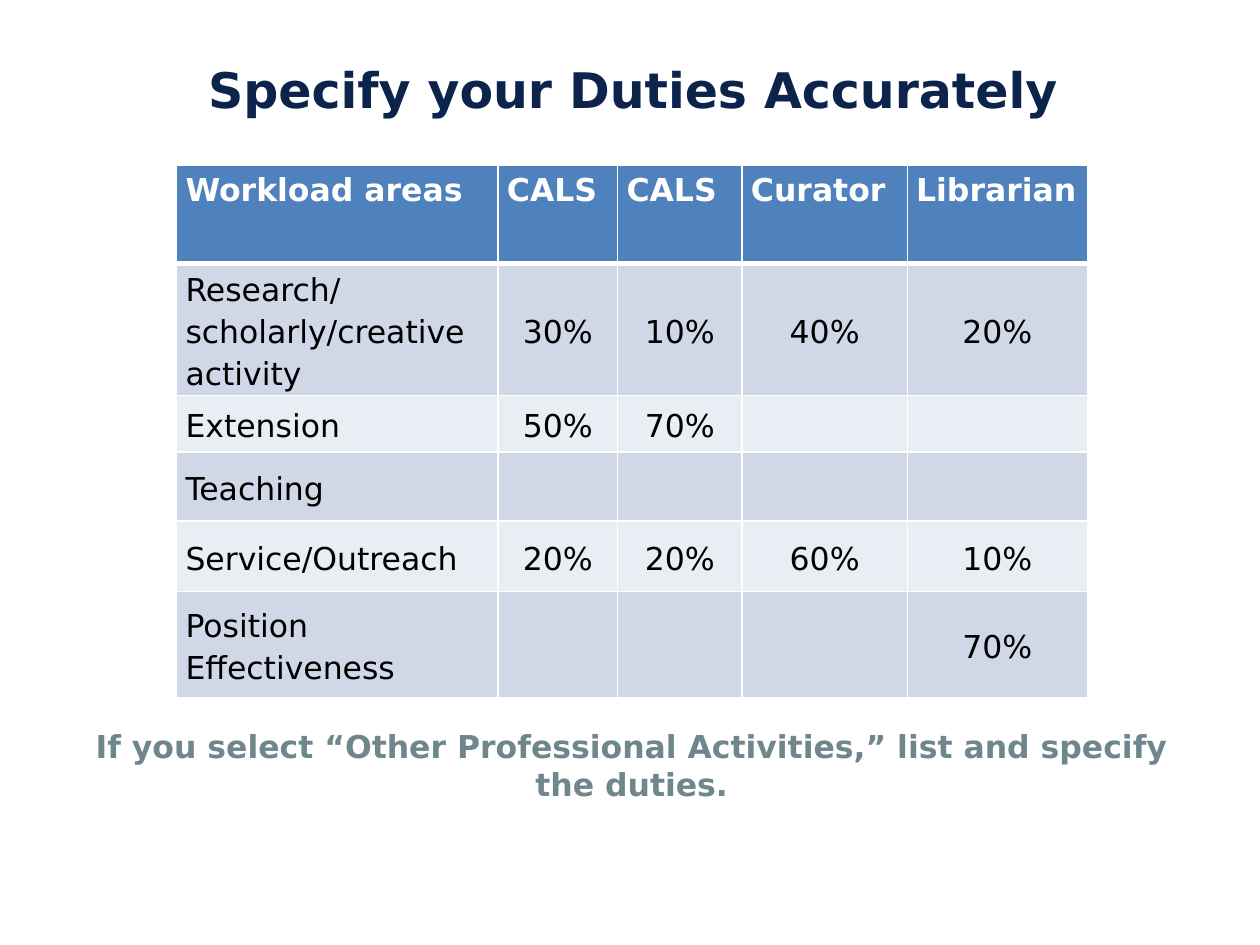
import pptx
import pptx.util
import pptx.dml.color
import pptx.enum.text
import pptx.oxml
import pptx.oxml.ns

Cm, Pt = pptx.util.Cm, pptx.util.Pt
ALIGN, ANCHOR = pptx.enum.text.PP_ALIGN, pptx.enum.text.MSO_ANCHOR
FONT = "DejaVu Sans"
COLORS = {
    "navy": "0C234B",
    "slate": "6F868D",
    "header": "4F81BD",
    "dark_band": "D0D8E8",
    "light_band": "E9EDF4",
    "white": "FFFFFF",
    "black": "000000",
}
COL_WIDTHS = [6.48, 2.41, 2.51, 3.33, 3.63]
ROW_HEIGHTS = [1.98, 2.49, 1.14, 1.4, 1.42, 2.13]
DUTIES = [
    ["Workload areas", "CALS", "CALS", "Curator", "Librarian"],
    ["Research/scholarly/creative activity", "30%", "10%", "40%", "20%"],
    ["Extension", "50%", "70%", "", ""],
    ["Teaching", "", "", "", ""],
    ["Service/Outreach", "20%", "20%", "60%", "10%"],
    ["Position Effectiveness", "", "", "", "70%"],
]


def rgb(name):
    """Return the named colour."""
    return pptx.dml.color.RGBColor.from_string(COLORS[name])


def write(tf, text, size, color, bold, align):
    """Write one formatted paragraph and return it."""
    tf.text = text
    p = tf.paragraphs[0]
    p.alignment = align
    for r in p.runs:
        r.font.name, r.font.size, r.font.bold = FONT, Pt(size), bold
        r.font.color.rgb = rgb(color)
    return p


def add_title(s, text):
    """Place and fill the title placeholder."""
    sp = s.shapes.title
    sp.left, sp.top, sp.width, sp.height = Cm(1.96), Cm(0.25), Cm(21.59), Cm(3.07)
    sp.text_frame.vertical_anchor = ANCHOR.MIDDLE
    write(sp.text_frame, text, 28, "navy", True, ALIGN.CENTER)


def add_note(s, text):
    """Add the centred remark under the table."""
    tf = s.shapes.add_textbox(Cm(1.24), Cm(14.53), Cm(22.99), Cm(1.8)).text_frame
    tf.word_wrap = True
    tf.auto_size = pptx.enum.text.MSO_AUTO_SIZE.SHAPE_TO_FIT_TEXT
    write(tf, text, 18, "slate", True, ALIGN.CENTER)


def set_borders(cell, widths):
    """Draw white borders of the given point widths, keyed by side."""
    tcPr = cell._tc.get_or_add_tcPr()
    for i, side in enumerate("LRTB"):
        tcPr.insert(i, pptx.oxml.parse_xml(
            f'<a:ln{side} {pptx.oxml.ns.nsdecls("a")} w="{Pt(widths[side])}">'
            f'<a:solidFill><a:srgbClr val="{COLORS["white"]}"/></a:solidFill></a:ln{side}>'))


def fill_cell(cell, text, row, col):
    """Format one table cell according to its row and column."""
    header = row == 0
    band = "header" if header else "dark_band" if row % 2 else "light_band"
    cell.fill.solid()
    cell.fill.fore_color.rgb = rgb(band)
    set_borders(cell, {"L": 1, "R": 1, "T": 3 if row == 1 else 1, "B": 3 if header else 1})
    if not text:
        return
    cell.margin_left = cell.margin_right = Cm(0.18)
    cell.margin_top, cell.margin_bottom = Cm(0.03), 0
    cell.vertical_anchor = ANCHOR.TOP if header else ANCHOR.MIDDLE
    align = ALIGN.LEFT if header or col == 0 else ALIGN.CENTER
    p = write(cell.text_frame, text, 18, "white" if header else "black", header, align)
    p.line_spacing, p.space_after = 1.15, Pt(10)


def add_duties_table(s):
    """Add the table of workload shares."""
    table = s.shapes.add_table(
        len(ROW_HEIGHTS), len(COL_WIDTHS), Cm(3.56), Cm(3.33),
        Cm(sum(COL_WIDTHS)), Cm(sum(ROW_HEIGHTS))).table
    for column, width in zip(table.columns, COL_WIDTHS):
        column.width = Cm(width)
    for row, height in zip(table.rows, ROW_HEIGHTS):
        row.height = Cm(height)
    for i, texts in enumerate(DUTIES):
        for j, text in enumerate(texts):
            fill_cell(table.cell(i, j), text, i, j)


def main():
    """Build and save the slide."""
    prs = pptx.Presentation()
    prs.slide_width, prs.slide_height = Cm(25.4), Cm(19.05)
    s = prs.slides.add_slide(prs.slide_layouts[5])
    add_title(s, "Specify your Duties Accurately")
    add_note(s, "If you select “Other Professional Activities,” list and specify the duties.")
    add_duties_table(s)
    prs.save("out.pptx")


if __name__ == "__main__":
    main()
